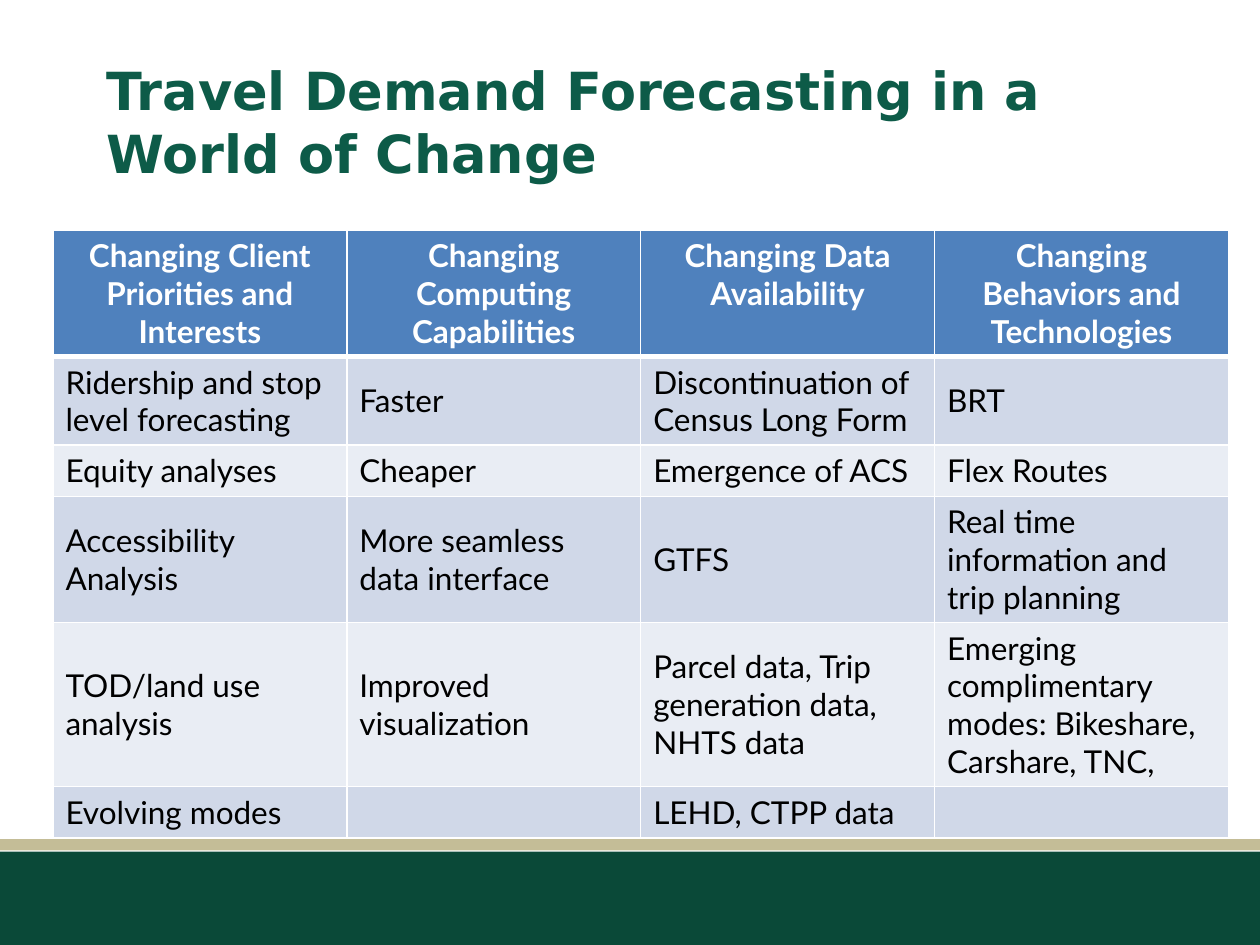
from lxml import etree
from pptx import Presentation
from pptx import util as u
from pptx.dml.color import RGBColor
from pptx.enum import shapes, text
from pptx.oxml.ns import qn

# Content
TITLE = "Travel Demand Forecasting in a World of Change"
ROWS = [
    ("Changing Client Priorities and Interests", "Changing Computing Capabilities",
     "Changing Data Availability", "Changing Behaviors and Technologies"),
    ("Ridership and stop level forecasting", "Faster",
     "Discontinuation of Census Long Form", "BRT"),
    ("Equity analyses", "Cheaper", "Emergence of ACS", "Flex Routes"),
    ("Accessibility Analysis", "More seamless data interface",
     "GTFS", "Real time information and trip planning"),
    ("TOD/land use analysis", "Improved visualization",
     "Parcel data, Trip generation data, NHTS data",
     "Emerging complimentary modes: Bikeshare, Carshare, TNC,"),
    ("Evolving modes", "", "LEHD, CTPP data", ""),
]

# Formats
W, H = 10, 7.5
BANDS = [(6.66, 0.09, "C4BD97"), (6.76, 0.74, "0A4938")]  # top, height, colour
TITLE_FONT = {"name": "DejaVu Sans", "size": u.Pt(30), "bold": True}
HEAD_FONT = {"name": "Lato", "size": u.Pt(18), "bold": True}
BODY_FONT = {**HEAD_FONT, "bold": False}
HEAD_FILL, STRIPES = "4F81BD", ("D0D8E8", "E9EDF4")
TABLE_LEFT, TABLE_TOP, TABLE_W, ROW_H = 0.42, 1.83, 9.33, 0.41


def paint(fill, colour):
    fill.solid()
    fill.fore_color.rgb = RGBColor.from_string(colour)


def write(p, words, font, colour):
    r = p.add_run()
    r.text = words
    for name, value in font.items():
        setattr(r.font, name, value)
    r.font.color.rgb = RGBColor.from_string(colour)


def add_borders(cell, widths, colour="FFFFFF"):
    tc_pr = cell._tc.get_or_add_tcPr()
    for i, (side, width) in enumerate(widths.items()):
        ln = etree.Element(qn(f"a:ln{side}"), w=str(u.Pt(width)))
        fill = etree.SubElement(ln, qn("a:solidFill"))
        etree.SubElement(fill, qn("a:srgbClr"), val=colour)
        tc_pr.insert(i, ln)


prs = Presentation()
prs.slide_width, prs.slide_height = u.Inches(W), u.Inches(H)
s = prs.slides.add_slide(prs.slide_layouts[6])

# Footer bands
for top, height, colour in BANDS:
    sp = s.shapes.add_shape(shapes.MSO_SHAPE.RECTANGLE, 0, u.Inches(top),
                            prs.slide_width, u.Inches(height))
    sp.shadow.inherit = False
    paint(sp.fill, colour)
    sp.line.fill.background()

# Title
tf = s.shapes.add_textbox(*map(u.Inches, (0.75, 0.25, 8.5, 1.42))).text_frame
tf.word_wrap = True
tf.vertical_anchor = text.MSO_ANCHOR.MIDDLE
write(tf.paragraphs[0], TITLE, TITLE_FONT, "0D5B48")

# Table: header row, then striped body rows that grow with their text
table = s.shapes.add_table(
    len(ROWS), len(ROWS[0]), u.Inches(TABLE_LEFT), u.Inches(TABLE_TOP),
    u.Inches(TABLE_W), u.Inches(ROW_H * len(ROWS))).table
for i, row in enumerate(ROWS):
    head = i == 0
    for j, words in enumerate(row):
        cell = table.cell(i, j)
        paint(cell.fill, HEAD_FILL if head else STRIPES[(i - 1) % 2])
        add_borders(cell, {"L": 1, "R": 1, "T": 3 if i == 1 else 1, "B": 3 if head else 1})
        p = cell.text_frame.paragraphs[0]
        if head:
            p.alignment = text.PP_ALIGN.CENTER
        else:
            cell.vertical_anchor = text.MSO_ANCHOR.MIDDLE
        if words:
            write(p, words, HEAD_FONT if head else BODY_FONT, "FFFFFF" if head else "000000")

prs.save("out.pptx")
